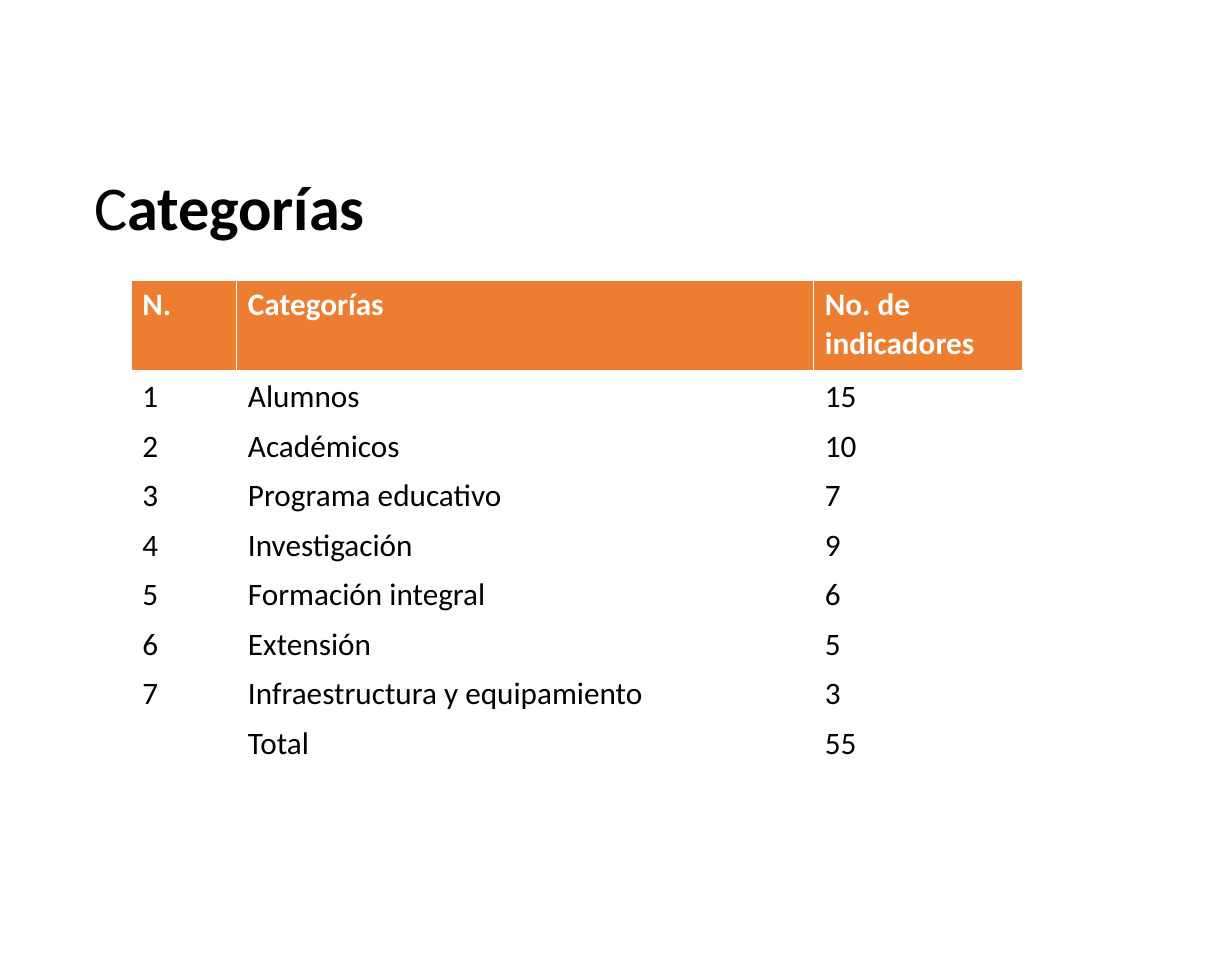
from lxml.etree import SubElement
from pptx import Presentation
from pptx.dml.color import RGBColor
from pptx.enum.text import MSO_ANCHOR as Anchor
from pptx.oxml.ns import qn
from pptx.util import Cm, Pt

FONT = "Calibri"
ORANGE, WHITE, BLACK = "ED7D31", "FFFFFF", "000000"
HEADINGS = ("N.", "Categorías", "No. de indicadores")
INDICATORS = {
    "Alumnos": 15,
    "Académicos": 10,
    "Programa educativo": 7,
    "Investigación": 9,
    "Formación integral": 6,
    "Extensión": 5,
    "Infraestructura y equipamiento": 3,
}
COLUMN_WIDTHS = (2.39, 13.06, 4.72)
HEADER_HEIGHT, ROW_HEIGHT = 2.08, 1.12


def color(hex_code):
    return RGBColor.from_string(hex_code)


def set_font(font, size, hex_code, bold=None):
    font.name, font.size, font.bold = FONT, Pt(size), bold
    font.color.rgb = color(hex_code)


def add_title(slide, left, top, width, height):
    title = slide.shapes.add_textbox(Cm(left), Cm(top), Cm(width), Cm(height)).text_frame
    title.word_wrap = True
    title.vertical_anchor = Anchor.MIDDLE
    heading = title.paragraphs[0]
    heading.line_spacing = 0.9
    set_font(heading.font, 40, BLACK)
    heading.add_run().text = "C"
    ending = heading.add_run()
    ending.text = "ategorías"
    ending.font.bold = True


def add_borders(cell, bottom_width):
    properties = cell._tc.get_or_add_tcPr()
    for side, width in (("L", 1), ("R", 1), ("T", 1), ("B", bottom_width)):
        border = SubElement(properties, qn(f"a:ln{side}"), w=str(Pt(width)))
        fill = SubElement(border, qn("a:solidFill"))
        SubElement(fill, qn("a:srgbClr"), val=WHITE)


def fill_cell(cell, text, is_header):
    add_borders(cell, 3 if is_header else 1)
    if is_header:
        cell.fill.solid()
        cell.fill.fore_color.rgb = color(ORANGE)
    else:
        cell.fill.background()
    cell.text = str(text)
    set_font(cell.text_frame.paragraphs[0].font, 20, WHITE if is_header else BLACK, is_header)


def add_categories(slide, left, top):
    body = [(number, *entry) for number, entry in enumerate(INDICATORS.items(), 1)]
    rows = [HEADINGS, *body, ("", "Total", sum(INDICATORS.values()))]
    height = HEADER_HEIGHT + ROW_HEIGHT * (len(rows) - 1)
    categories = slide.shapes.add_table(
        len(rows), len(HEADINGS), Cm(left), Cm(top), Cm(sum(COLUMN_WIDTHS)), Cm(height)
    ).table
    categories.horz_banding = False
    for column, width in zip(categories.columns, COLUMN_WIDTHS):
        column.width = Cm(width)
    for index, (row, texts) in enumerate(zip(categories.rows, rows)):
        row.height = Cm(ROW_HEIGHT if index else HEADER_HEIGHT)
        for cell, text in zip(row.cells, texts):
            fill_cell(cell, text, index == 0)


def main():
    deck = Presentation()
    deck.slide_width, deck.slide_height = Cm(27.89), Cm(21.59)
    slide = deck.slides.add_slide(deck.slide_layouts[6])
    add_title(slide, 1.88, 3.38, 24.05, 2.77)
    add_categories(slide, 2.97, 6.35)
    deck.save("out.pptx")


if __name__ == "__main__":
    main()
